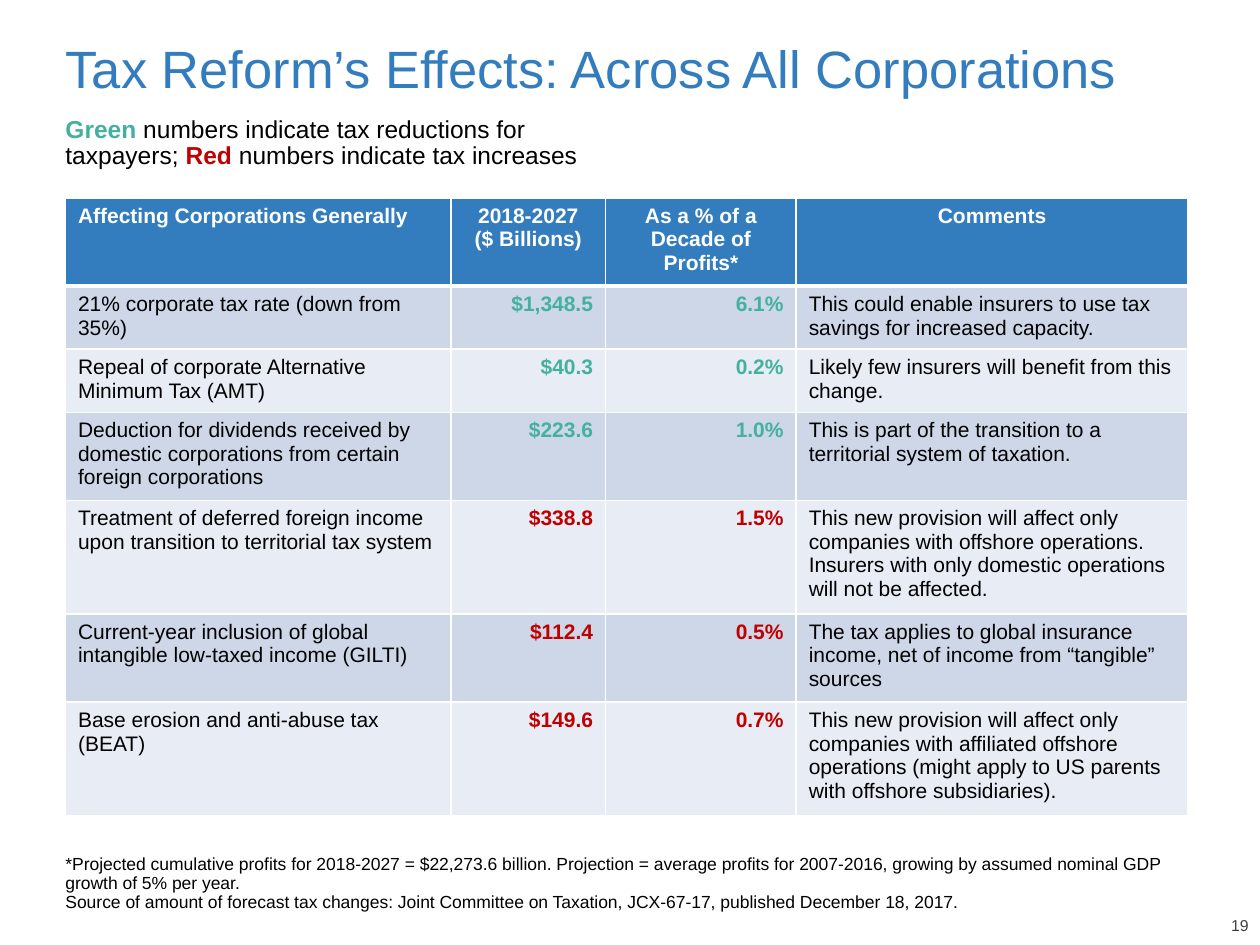
from lxml.etree import SubElement
from pptx import Presentation
from pptx.dml.color import RGBColor
from pptx.enum.text import MSO_ANCHOR as Anchor, PP_ALIGN as Align
from pptx.oxml.ns import qn
from pptx.util import Cm, Pt

COLORS = {
    "blue": "337DBE",
    "green": "43B19E",
    "red": "C00000",
    "black": "000000",
    "white": "FFFFFF",
    "gray": "404040",
    "band_dark": "CED7E8",
    "band_light": "E8ECF4",
}
FONT = "Arial"

HEADERS = [
    "Affecting Corporations Generally",
    "2018-2027\n($ Billions)",
    "As a % of a Decade of Profits*",
    "Comments",
]
PROVISIONS = [
    ("21% corporate tax rate (down from 35%)", "$1,348.5", "6.1%", "green",
     "This could enable insurers to use tax savings for increased capacity."),
    ("Repeal of corporate Alternative Minimum Tax (AMT)", "$40.3", "0.2%", "green",
     "Likely few insurers will benefit from this change."),
    ("Deduction for dividends received by domestic corporations from certain foreign corporations",
     "$223.6", "1.0%", "green",
     "This is part of the transition to a territorial system of taxation."),
    ("Treatment of deferred foreign income upon transition to territorial tax system",
     "$338.8", "1.5%", "red",
     "This new provision will affect only companies with offshore operations. "
     "Insurers with only domestic operations will not be affected."),
    ("Current-year inclusion of global intangible low-taxed income (GILTI)",
     "$112.4", "0.5%", "red",
     "The tax applies to global insurance income, net of income from “tangible” sources"),
    ("Base erosion and anti-abuse tax (BEAT)", "$149.6", "0.7%", "red",
     "This new provision will affect only companies with affiliated offshore operations "
     "(might apply to US parents with offshore subsidiaries)."),
]
FOOTNOTE = (
    "*Projected cumulative profits for 2018-2027 = $22,273.6 billion. Projection = average "
    "profits for 2007-2016, growing by assumed nominal GDP growth of 5% per year.\n"
    "Source of amount of forecast tax changes: Joint Committee on Taxation, JCX-67-17, "
    "published December 18, 2017."
)


def rgb(name):
    return RGBColor.from_string(COLORS[name])


def write(paragraph, text, size=12, color="black", bold=False, align=Align.LEFT, spacing=None):
    paragraph.alignment = align
    if spacing:
        paragraph.line_spacing = spacing
    for index, line in enumerate(text.split("\n")):
        if index:
            paragraph.add_line_break()
        run = paragraph.add_run()
        run.text = line
        run.font.name = FONT
        run.font.size = Pt(size)
        run.font.bold = bold
        run.font.color.rgb = rgb(color)


def add_text_area(slide, left, top, width, height, anchor=Anchor.TOP, insets=None):
    frame = slide.shapes.add_textbox(Cm(left), Cm(top), Cm(width), Cm(height)).text_frame
    frame.word_wrap = True
    frame.vertical_anchor = anchor
    if insets:
        (frame.margin_left, frame.margin_top,
         frame.margin_right, frame.margin_bottom) = map(Cm, insets)
    return frame.paragraphs[0]


def add_title(slide, text):
    title = slide.shapes.title
    title.left, title.top, title.width, title.height = Cm(1.07), Cm(0.64), Cm(23.5), Cm(1.6)
    title.text_frame.vertical_anchor = Anchor.MIDDLE
    write(title.text_frame.paragraphs[0], text, size=30, color="blue", spacing=0.9)


def add_color_key(slide):
    key = add_text_area(slide, 1.07, 2.24, 12.17, 1.22)
    for text, color in [
        ("Green", "green"),
        (" numbers indicate tax reductions for taxpayers; ", "black"),
        ("Red", "red"),
        (" numbers indicate tax increases", "black"),
    ]:
        write(key, text, size=14, color=color, bold=color != "black", spacing=0.9)


def set_borders(cell, **widths):
    properties = cell._tc.get_or_add_tcPr()
    for side in "LRTB":
        line = SubElement(properties, qn(f"a:ln{side}"), w=str(Pt(widths.get(side, 1))))
        fill = SubElement(line, qn("a:solidFill"))
        SubElement(fill, qn("a:srgbClr"), val=COLORS["white"])


def fill_cell(cell, text, background, borders, **text_format):
    set_borders(cell, **borders)
    cell.fill.solid()
    cell.fill.fore_color.rgb = rgb(background)
    write(cell.text_frame.paragraphs[0], text, **text_format)


def add_effects_table(slide):
    frame = slide.shapes.add_table(
        len(PROVISIONS) + 1, len(HEADERS), Cm(1.32), Cm(3.99), Cm(22.63), Cm(12.45))
    table = frame.table
    for column, width in zip(table.columns, [7.77, 3.12, 3.84, 7.9]):
        column.width = Cm(width)
    for row in table.rows:
        row.height = Cm(1.04)
    frame.height = Cm(12.45)

    for index, header in enumerate(HEADERS):
        fill_cell(table.cell(0, index), header, "blue", {"B": 3}, color="white", bold=True,
                  align=Align.CENTER if index else Align.LEFT)
    for number, (provision, amount, share, effect, comment) in enumerate(PROVISIONS, 1):
        band = "band_dark" if number % 2 else "band_light"
        borders = {"T": 3} if number == 1 else {}
        figure = {"color": effect, "bold": True, "align": Align.RIGHT}
        entries = [(provision, {}), (amount, figure), (share, figure), (comment, {})]
        for index, (text, text_format) in enumerate(entries):
            fill_cell(table.cell(number, index), text, band, borders, **text_format)


def main():
    deck = Presentation()
    deck.slide_width, deck.slide_height = Cm(25.4), Cm(19.05)
    slide = deck.slides.add_slide(deck.slide_layouts[5])
    add_title(slide, "Tax Reform’s Effects: Across All Corporations")
    add_color_key(slide)
    add_effects_table(slide)
    footnote = add_text_area(slide, 1.07, 17.02, 23.5, 1.78, Anchor.BOTTOM,
                             (0.25, 0, 0.25, 0.4))
    write(footnote, FOOTNOTE, size=10, spacing=0.9)
    page_number = add_text_area(slide, 23.95, 18.52, 1.22, 0.33, Anchor.BOTTOM, (0, 0, 0, 0))
    write(page_number, "19", size=9, color="gray", align=Align.RIGHT, spacing=0.9)
    deck.save("out.pptx")


if __name__ == "__main__":
    main()
